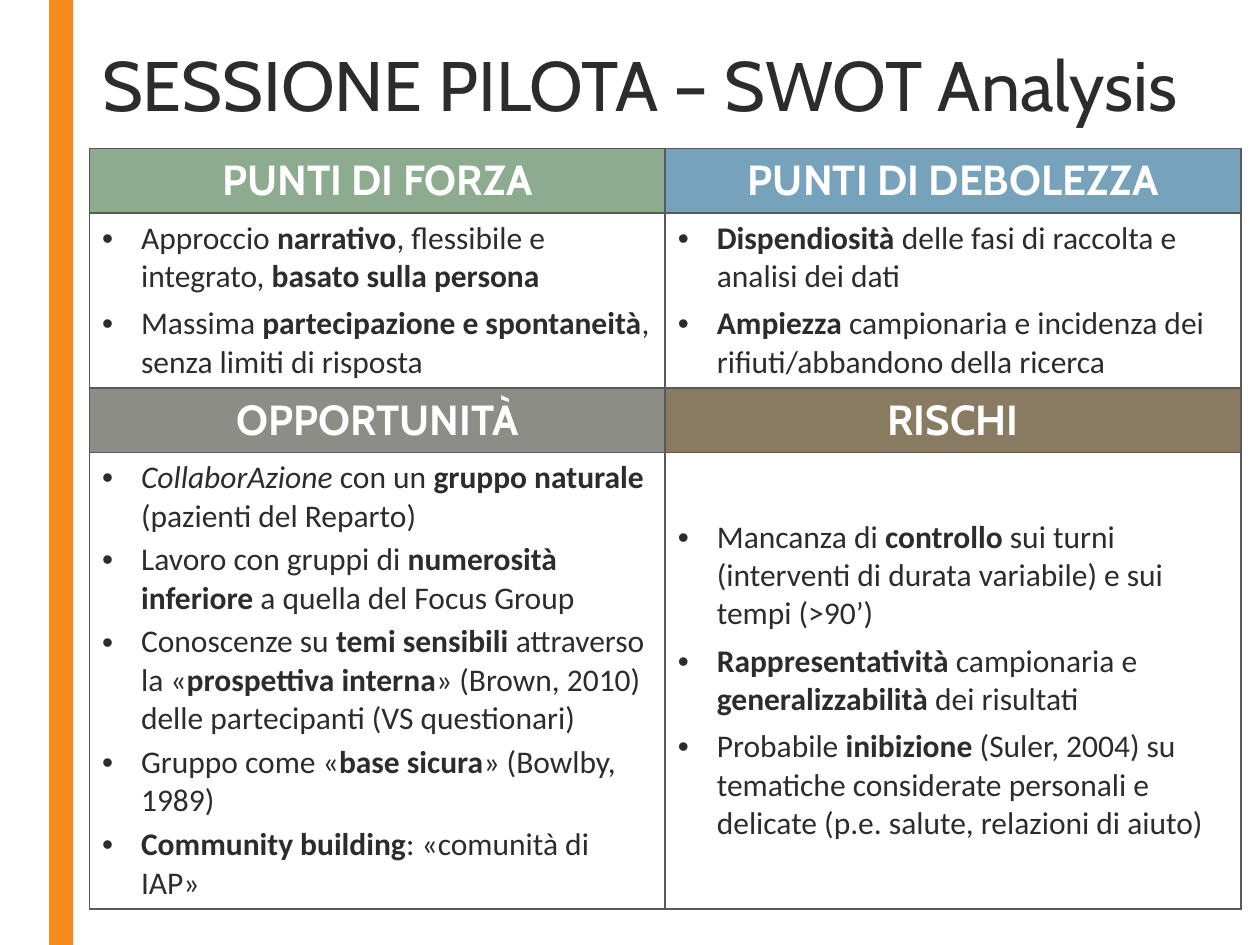
from dataclasses import dataclass

from lxml import etree
from pptx import Presentation
from pptx.dml.color import RGBColor
from pptx.enum.shapes import MSO_SHAPE
from pptx.enum.text import MSO_ANCHOR, MSO_AUTO_SIZE, PP_ALIGN
from pptx.oxml.ns import qn
from pptx.util import Inches, Pt

RECT = MSO_SHAPE.RECTANGLE
TOP, MIDDLE = MSO_ANCHOR.TOP, MSO_ANCHOR.MIDDLE
CENTER = PP_ALIGN.CENTER
NO_FIT = MSO_AUTO_SIZE.NONE
TITLE_ONLY = 5


@dataclass(frozen=True)
class Theme:
    heading_font: str = "Cabin"
    body_font: str = "Calibri"
    title_size: int = 40
    heading_size: int = 24
    body_size: int = 18
    text: str = "2C2C2C"
    white: str = "FFFFFF"
    border: str = "595959"
    accent: str = "F78A1D"
    strengths: str = "8DAB8E"
    weaknesses: str = "77A2BB"
    opportunities: str = "8C8D86"
    threats: str = "897B61"


@dataclass
class Quadrant:
    """One SWOT area; in items, *...* is bold and _..._ is italic."""
    heading: str
    color: str
    items: list
    space_after: int = 5
    anchor: int = TOP


class SlideBuilder:
    def __init__(self, prs, theme):
        self.theme = theme
        self.slide = prs.slides.add_slide(prs.slide_layouts[TITLE_ONLY])

    def format_run(self, r, font, size, color, bold=False, italic=False):
        r.font.name = font
        r.font.size = Pt(size)
        r.font.color.rgb = RGBColor.from_string(color)
        r.font.bold = bold
        r.font.italic = italic

    def title(self, text, left, top, width, height):
        sp = self.slide.shapes.title
        sp.left, sp.top, sp.width, sp.height = left, top, width, height
        tf = sp.text_frame
        tf.text = text
        tf.auto_size = NO_FIT
        tf.vertical_anchor = MIDDLE
        p = tf.paragraphs[0]
        p.alignment = PP_ALIGN.LEFT
        p.line_spacing = 0.89
        t = self.theme
        self.format_run(p.runs[0], t.heading_font, t.title_size, t.text)

    def bar(self, left, top, width, height):
        sp = self.slide.shapes.add_shape(RECT, left, top, width, height)
        sp.shadow.inherit = False
        sp.fill.solid()
        sp.fill.fore_color.rgb = RGBColor.from_string(self.theme.accent)
        sp.line.fill.background()

    def borders(self, cell):
        tc_pr = cell._tc.get_or_add_tcPr()
        for side in ("lnL", "lnR", "lnT", "lnB"):
            ln = etree.SubElement(tc_pr, qn(f"a:{side}"), w=str(Pt(1)))
            fill = etree.SubElement(ln, qn("a:solidFill"))
            etree.SubElement(fill, qn("a:srgbClr"), val=self.theme.border)

    def bullet(self, p):
        p_pr = p._p.get_or_add_pPr()
        p_pr.set("marL", str(Inches(0.31)))
        p_pr.set("indent", str(-Inches(0.31)))
        etree.SubElement(p_pr, qn("a:buFont"), typeface="Arial")
        etree.SubElement(p_pr, qn("a:buChar"), char="•")

    def heading_cell(self, cell, quadrant):
        t = self.theme
        self.borders(cell)
        cell.fill.solid()
        cell.fill.fore_color.rgb = RGBColor.from_string(quadrant.color)
        cell.vertical_anchor = MIDDLE
        cell.text_frame.text = quadrant.heading
        p = cell.text_frame.paragraphs[0]
        p.alignment = CENTER
        self.format_run(p.runs[0], t.heading_font, t.heading_size, t.white, bold=True)

    def list_cell(self, cell, quadrant):
        t = self.theme
        self.borders(cell)
        cell.fill.background()
        cell.vertical_anchor = quadrant.anchor
        tf = cell.text_frame
        for i, item in enumerate(quadrant.items):
            p = tf.add_paragraph() if i else tf.paragraphs[0]
            p.space_after = Pt(quadrant.space_after)
            self.bullet(p)
            for j, part in enumerate(item.split("*")):
                for k, text in enumerate(part.split("_")):
                    if text:
                        r = p.add_run()
                        r.text = text
                        self.format_run(r, t.body_font, t.body_size, t.text,
                                        bold=j % 2 == 1, italic=k % 2 == 1)

    def swot_table(self, quadrants, left, top, col_width, row_heights):
        """Places quadrants two by two, each a heading cell above a list cell."""
        table = self.slide.shapes.add_table(
            len(row_heights), 2, left, top, col_width * 2, sum(row_heights)).table
        table.horz_banding = False
        for col in table.columns:
            col.width = col_width
        for row, height in zip(table.rows, row_heights):
            row.height = height
        for i, quadrant in enumerate(quadrants):
            row, col = i // 2 * 2, i % 2
            self.heading_cell(table.cell(row, col), quadrant)
            self.list_cell(table.cell(row + 1, col), quadrant)


def main():
    prs = Presentation()
    prs.slide_width, prs.slide_height = Inches(10), Inches(7.5)
    theme = Theme()
    s = SlideBuilder(prs, theme)
    quadrants = [
        Quadrant("PUNTI DI FORZA", theme.strengths, [
            "Approccio *narrativo*, flessibile e integrato, *basato sulla persona*",
            "Massima *partecipazione e spontaneità*, senza limiti di risposta",
        ]),
        Quadrant("PUNTI DI DEBOLEZZA", theme.weaknesses, [
            "*Dispendiosità* delle fasi di raccolta e analisi dei dati",
            "*Ampiezza* campionaria e incidenza dei rifiuti/abbandono della ricerca",
        ]),
        Quadrant("OPPORTUNITÀ", theme.opportunities, [
            "_CollaborAzione_ con un *gruppo naturale *(pazienti del Reparto)",
            "Lavoro con gruppi di *numerosità inferiore* a quella del Focus Group",
            "Conoscenze su *temi sensibili *attraverso la «*prospettiva interna*»"
            " (Brown, 2010) delle partecipanti (VS questionari)",
            "Gruppo come «*base sicura*» (Bowlby, 1989)",
            "*Community building*: «comunità di IAP»",
        ], space_after=3),
        Quadrant("RISCHI", theme.threats, [
            "Mancanza di *controllo* sui turni (interventi di durata variabile)"
            " e sui tempi (>90’)",
            "*Rappresentatività *campionaria e *generalizzabilità* dei risultati",
            "Probabile* inibizione* (Suler, 2004) su tematiche considerate personali"
            " e delicate (p.e. salute, relazioni di aiuto)",
        ], anchor=MIDDLE),
    ]
    s.bar(Inches(0.39), 0, Inches(0.19), prs.slide_height)
    s.swot_table(quadrants, Inches(0.71), Inches(1.18), Inches(4.57),
                 [Inches(h) for h in (0.51, 1.22, 0.51, 3.32)])
    s.title("SESSIONE PILOTA – SWOT Analysis",
            Inches(0.71), Inches(0.35), Inches(9.04), Inches(0.71))
    prs.save("out.pptx")


if __name__ == "__main__":
    main()
